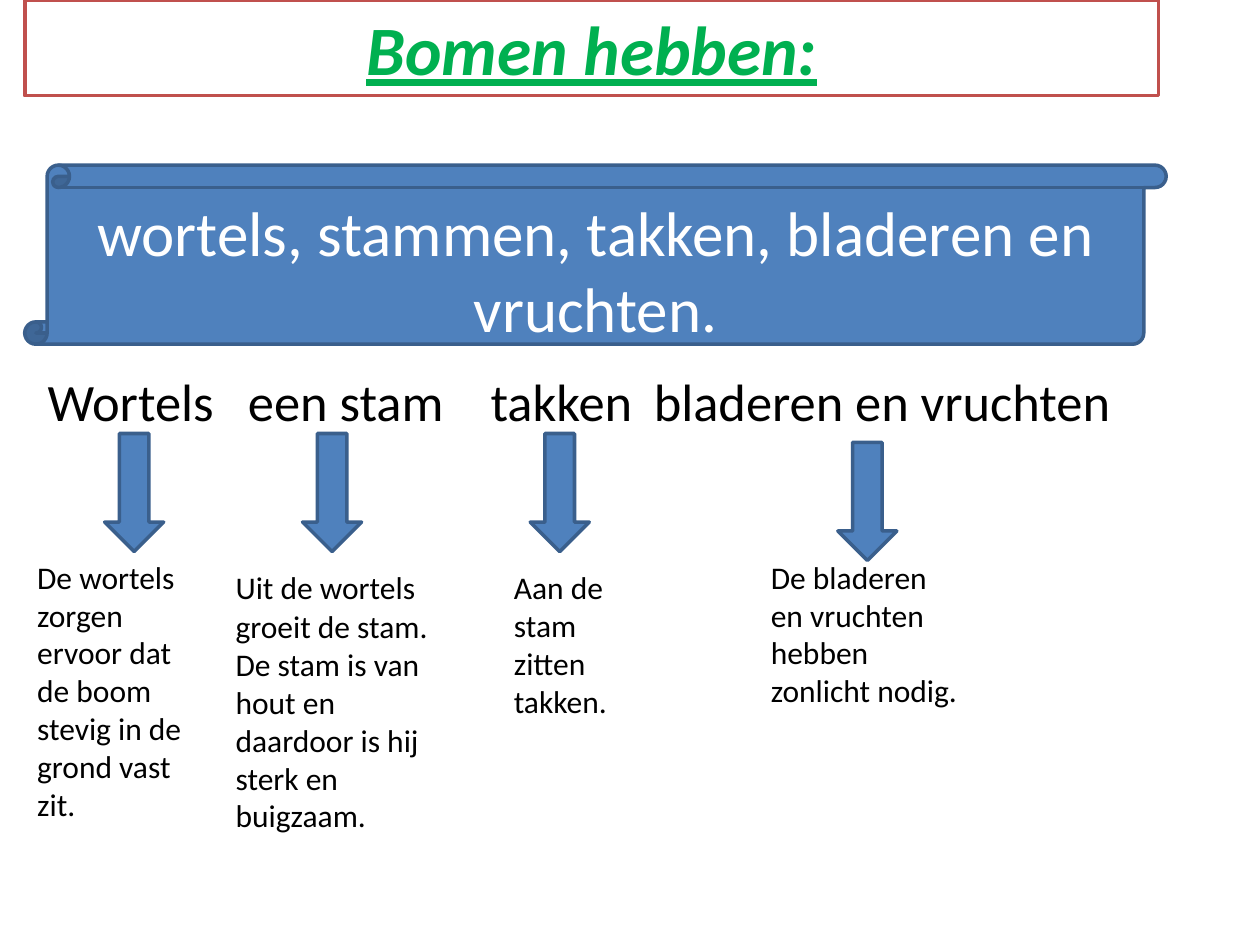
"""Build a slide on the parts of a tree and what each part does."""
from dataclasses import dataclass

from lxml import etree
from pptx import Presentation
from pptx.dml.color import RGBColor
from pptx.enum.shapes import MSO_SHAPE
from pptx.enum.text import MSO_ANCHOR, MSO_AUTO_SIZE, PP_ALIGN
from pptx.oxml.ns import qn
from pptx.util import Cm, Pt

RECTANGLE = MSO_SHAPE.RECTANGLE
SCROLL = MSO_SHAPE.VERTICAL_SCROLL
DOWN_ARROW = MSO_SHAPE.DOWN_ARROW
TOP, MIDDLE = MSO_ANCHOR.TOP, MSO_ANCHOR.MIDDLE
GROW = MSO_AUTO_SIZE.SHAPE_TO_FIT_TEXT
LEFT, CENTER = PP_ALIGN.LEFT, PP_ALIGN.CENTER

FONT = "Calibri"
COLORS = {
    "white": "FFFFFF",
    "black": "000000",
    "green": "00B050",
    "red": "C0504D",
    "blue": "4F81BD",
    "dark blue": "3A5F8C",
}
HEADINGS = ("Wortels", "een stam", "takken", "bladeren en vruchten")
HEADING_TABS = (4.04, 8.93, 12.22)
ARROW_SIZE = (1.19, 2.38)


@dataclass(frozen=True)
class Box:
    """Position and size in centimetres."""
    left: float
    top: float
    width: float
    height: float

    def lengths(self) -> tuple:
        """Return the four values as lengths."""
        return Cm(self.left), Cm(self.top), Cm(self.width), Cm(self.height)


@dataclass(frozen=True)
class Explanation:
    """A text about one part of a tree."""
    text: str
    box: Box
    wrap: bool = True


ARROWS = ((2.11, 8.74), (6.1, 8.74), (10.69, 8.74), (16.89, 8.92))
EXPLANATIONS = (
    Explanation("De wortels zorgen ervoor dat de boom stevig in de grond vast zit.",
                Box(0.5, 11.12, 3.81, 5.64)),
    Explanation("Uit de wortels", Box(4.5, 11.33, 4.32, 1.03), wrap=False),
    Explanation("groeit de stam. De stam is van hout en daardoor is hij sterk en buigzaam.",
                Box(4.5, 12.12, 4.39, 4.87)),
    Explanation("Aan de stam zitten takken.", Box(10.11, 11.33, 2.59, 3.33)),
    Explanation("De bladeren en vruchten hebben zonlicht nodig.",
                Box(15.29, 11.12, 4.37, 3.33)),
)


def color(name: str) -> RGBColor:
    """Look up a named colour."""
    return RGBColor.from_string(COLORS[name])


def add_shape(slide, kind, box: Box, fill: str, line: str):
    """Add a filled and outlined preset shape."""
    shape = slide.shapes.add_shape(kind, *box.lengths())
    shape.shadow.inherit = False
    shape.fill.solid()
    shape.fill.fore_color.rgb = color(fill)
    shape.line.color.rgb = color(line)
    shape.line.width = Pt(2)
    return shape


def set_text(shape, text: str, size: float, font_color: str,
             alignment=LEFT, anchor=TOP, wrap: bool = True):
    """Write one paragraph into a shape and return it."""
    frame = shape.text_frame
    frame.word_wrap = wrap
    frame.vertical_anchor = anchor
    paragraph = frame.paragraphs[0]
    paragraph.text = text
    paragraph.alignment = alignment
    paragraph.font.name = FONT
    paragraph.font.size = Pt(size)
    paragraph.font.color.rgb = color(font_color)
    return paragraph


def add_title(slide) -> None:
    """Add the framed title."""
    shape = add_shape(slide, RECTANGLE, Box(0.5, 0, 22.86, 1.93), "white", "red")
    paragraph = set_text(shape, "Bomen hebben:", 39.6, "green", CENTER, MIDDLE)
    paragraph.font.bold = True
    paragraph.font.italic = True
    paragraph.font.underline = True


def add_headings(slide) -> None:
    """Add the row of part names, spaced with tab stops."""
    shape = slide.shapes.add_textbox(*Box(0.71, 7.32, 22.4, 1.4).lengths())
    paragraph = shape.text_frame.paragraphs[0]
    tab_list = etree.SubElement(paragraph._p.get_or_add_pPr(), qn("a:tabLst"))
    for position in HEADING_TABS:
        etree.SubElement(tab_list, qn("a:tab"), pos=str(Cm(position)), algn="l")
    set_text(shape, "\t".join(HEADINGS), 30, "black")


def add_explanation(slide, explanation: Explanation) -> None:
    """Add the text that explains one part."""
    shape = slide.shapes.add_textbox(*explanation.box.lengths())
    set_text(shape, explanation.text, 18, "black", wrap=explanation.wrap)
    shape.text_frame.auto_size = GROW


def main() -> None:
    """Build and save the presentation."""
    presentation = Presentation()
    presentation.slide_width = Cm(25.4)
    presentation.slide_height = Cm(19.05)
    slide = presentation.slides.add_slide(presentation.slide_layouts[6])

    add_title(slide)
    add_headings(slide)
    scroll = add_shape(slide, SCROLL, Box(0.5, 3.33, 23.01, 3.61), "blue", "dark blue")
    set_text(scroll, "wortels, stammen, takken, bladeren en vruchten.", 36, "white", CENTER)
    for left, top in ARROWS:
        add_shape(slide, DOWN_ARROW, Box(left, top, *ARROW_SIZE), "blue", "dark blue")
    for explanation in EXPLANATIONS:
        add_explanation(slide, explanation)

    presentation.save("out.pptx")


if __name__ == "__main__":
    main()
